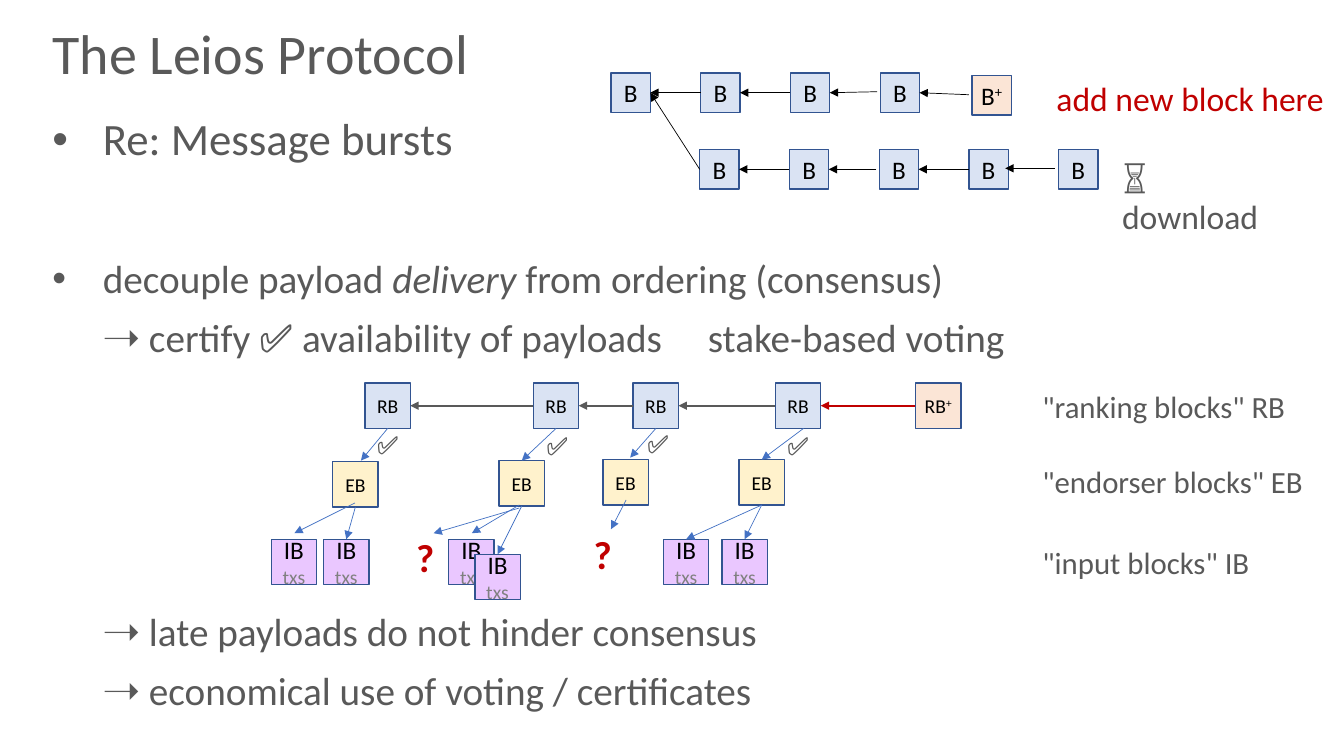
"""Build the Leios Protocol slide with its two block diagrams."""
from dataclasses import dataclass
from math import dist
from typing import Any, NamedTuple

from lxml import etree
from pptx import Presentation
from pptx import slide as sl
from pptx import util as u
from pptx.dml import color as dml
from pptx.enum import shapes, text
from pptx.oxml import ns

GREY, BLACK, RED, BLUE = "595959", "000000", "C00000", "4472C4"
PALE, PEACH, CREAM, LILAC = "DAE3F3", "FBE5D6", "FFF2CC", "EAC7FF"
SNAP = 0.025


class Run(NamedTuple):
    words: str
    size: float
    tint: str = GREY
    bold: bool = False
    slant: bool = False
    raised: bool = False


@dataclass
class Box:
    left: float
    top: float
    side: float
    fill: str
    rows: list[list[Run]]
    inset: tuple[float, float, float, float] = (0.1, 0.05, 0.1, 0.05)

    def ports(self) -> list[tuple[float, float]]:
        half = self.side / 2
        x, y = self.left + half, self.top + half
        return [(x, self.top), (self.left, y),
                (x, self.top + self.side), (self.left + self.side, y)]


class Arrow(NamedTuple):
    start: tuple[float, float]
    end: tuple[float, float]
    tint: str
    width: float


class Label(NamedTuple):
    left: float
    top: float
    width: float
    height: float
    run: Run
    wrap: bool = True


class Item(NamedTuple):
    runs: list[Run]
    after: float
    level: int = 0
    tab: float = 0


def hue(code: str) -> dml.RGBColor:
    return dml.RGBColor.from_string(code)


def apply(thing: Any, form: dict[str, Any]) -> None:
    for name, value in form.items():
        setattr(thing, name, value)


def add_node(host: Any, tag: str, **attrs: str) -> Any:
    return etree.SubElement(host, ns.qn(tag), attrs)


def add_runs(para: Any, runs: list[Run]) -> None:
    for item in runs:
        run = para.add_run()
        run.text = item.words
        apply(run.font, {"name": "Calibri", "size": u.Pt(item.size),
                         "bold": item.bold, "italic": item.slant})
        run.font.color.rgb = hue(item.tint)
        if item.raised:
            run._r.get_or_add_rPr().set("baseline", "30000")


def place(shape: Any, left: float, top: float, width: float, height: float) -> None:
    apply(shape, {"left": u.Inches(left), "top": u.Inches(top),
                  "width": u.Inches(width), "height": u.Inches(height)})


def draw_box(page: sl.Slide, box: Box) -> Any:
    shape = page.shapes.add_shape(
        shapes.MSO_SHAPE.RECTANGLE, *map(u.Inches, (box.left, box.top, box.side, box.side)))
    shape.shadow.inherit = False
    shape.fill.solid()
    shape.fill.fore_color.rgb = hue(box.fill)
    shape.line.color.rgb = hue("325491")
    shape.line.width = u.Pt(1)
    frame = shape.text_frame
    sides = ("margin_left", "margin_top", "margin_right", "margin_bottom")
    apply(frame, dict(zip(sides, map(u.Inches, box.inset))))
    frame.vertical_anchor = text.MSO_ANCHOR.MIDDLE
    for num, row in enumerate(box.rows):
        para = frame.add_paragraph() if num else frame.paragraphs[0]
        para.alignment = text.PP_ALIGN.CENTER
        add_runs(para, row)
    return shape


def draw_arrow(page: sl.Slide, arrow: Arrow, drawn: list[tuple[Box, Any]]) -> None:
    line = page.shapes.add_connector(
        shapes.MSO_CONNECTOR.STRAIGHT, *map(u.Inches, (*arrow.start, *arrow.end)))
    line.line.color.rgb = hue(arrow.tint)
    line.line.width = u.Pt(arrow.width)
    props = line._element.spPr
    add_node(props.find(ns.qn("a:ln")), "a:tailEnd", type="triangle")
    add_node(props, "a:effectLst")
    for point, join in ((arrow.start, line.begin_connect), (arrow.end, line.end_connect)):
        for box, shape in drawn:
            for site, port in enumerate(box.ports()):
                if dist(point, port) < SNAP:
                    join(shape, site)


def draw_label(page: sl.Slide, label: Label) -> None:
    frame = page.shapes.add_textbox(*map(u.Inches, label[:4])).text_frame
    frame.word_wrap = label.wrap
    add_runs(frame.paragraphs[0], [label.run])


def fill_body(frame: Any, items: list[Item]) -> None:
    apply(frame, {"auto_size": text.MSO_AUTO_SIZE.NONE, "word_wrap": True})
    for num, item in enumerate(items):
        para = frame.add_paragraph() if num else frame.paragraphs[0]
        apply(para, {"level": item.level, "line_spacing": 0.9,
                     "space_before": u.Pt(0), "space_after": u.Pt(item.after)})
        props = para._p.get_or_add_pPr()
        props.set("marL", str(u.Inches(0.5)))
        props.set("indent", str(0 if item.level else u.Inches(-0.5)))
        if item.level:
            add_node(props, "a:buNone")
        else:
            add_node(props, "a:buFont", typeface="Arial")
            add_node(props, "a:buChar", char="•")
        if item.tab:
            stops = add_node(props, "a:tabLst")
            add_node(stops, "a:tab", pos=str(u.Inches(item.tab)), algn="l")
        add_runs(para, item.runs)


ITEMS = [
    Item([Run("Re: Message bursts", 32)], 67),
    Item([Run("decouple payload ", 28), Run("delivery", 28, slant=True),
          Run(" from ordering (consensus)", 28)], 12),
    Item([Run("➝ certify ✅ availability of payloads\tstake-based voting", 28)], 180, 1, 7.5),
    Item([Run("➝ late payloads do not hinder consensus", 28)], 12, 1),
    Item([Run("➝ economical use of voting / certificates", 28)], 18, 1),
]

CHAIN = [(6.06 + 0.89 * i, 0.725) for i in range(4)] + [(6.94 + 0.89 * i, 1.485) for i in range(5)]
RANKS = [3.62, 5.29, 6.28, 7.69]
ENDORSED = [(3.3, 4.58), (4.95, 4.57), (5.98, 4.56), (7.33, 4.56)]
INPUTS = [(4.45, 5.35), (7.16, 5.35), (6.58, 5.35), (3.21, 5.35), (2.69, 5.35), (4.71, 5.5)]
SLIM = (0, 0.05, 0, 0.05)


def plus(name: str, size: float) -> list[list[Run]]:
    return [[Run(name, size, BLACK), Run("+", size, BLACK, raised=True)]]


BOXES = [
    *(Box(x, y, 0.39, PALE, [[Run("B", 18, BLACK)]]) for x, y in CHAIN),
    Box(9.64, 0.75, 0.39, PEACH, plus("B", 18), SLIM),
    *(Box(x, 3.8, 0.45, PALE, [[Run("RB", 14, BLACK)]]) for x in RANKS),
    Box(9.08, 3.8, 0.45, PEACH, plus("RB", 14), SLIM),
    *(Box(x, y, 0.45, CREAM, [[Run("EB", 14, BLACK)]]) for x, y in ENDORSED),
    *(Box(x, y, 0.45, LILAC, [[Run("IB", 18, BLACK)], [Run("txs", 14, "808080")]],
          (0, 0.04, 0, 0.05)) for x, y in INPUTS),
]

FLAT = [(6.95, 6.46, 0.92), (7.84, 7.35, 0.92), (8.7, 8.21, 0.91), (9.61, 9.13, 0.94),
        (7.83, 7.34, 1.68), (8.69, 8.21, 1.68), (9.6, 9.11, 1.68), (10.46, 9.97, 1.67)]
SLOPES = [
    (3.84, 4.25, 3.58, 4.57), (5.52, 4.25, 5.18, 4.57), (6.51, 4.25, 6.25, 4.54),
    (7.97, 4.25, 7.55, 4.56), (3.52, 4.99, 2.92, 5.29), (3.52, 5.04, 3.44, 5.35),
    (5.15, 5.01, 4.68, 5.29), (5.15, 5.04, 4.3, 5.29), (5.18, 5.03, 4.94, 5.5),
    (6.21, 4.96, 6.06, 5.25), (7.55, 5.01, 6.8, 5.35), (7.55, 5.01, 7.39, 5.35),
]
ARROWS = [
    *(Arrow((a, y), (b, y), BLACK, 0.5) for a, b, y in FLAT),
    Arrow((6.94, 1.68), (6.45, 0.92), BLACK, 0.5),
    *(Arrow((b, 4.03), (a + 0.45, 4.03), GREY, 1.25) for a, b in zip(RANKS, RANKS[1:])),
    Arrow((9.1, 4.03), (8.15, 4.03), RED, 1.25),
    *(Arrow((a, b), (c, d), BLUE, 0.5) for a, b, c, d in SLOPES),
]

LABELS = [
    Label(11.03, 1.49, 1.75, 0.91, Run("⏳ download", 24)),
    Label(10.38, 0.72, 2.91, 0.5, Run("add new block here", 24, RED)),
    *(Label(10.24, y, 2.99, 0.47, Run(words, 22)) for y, words in (
        (3.8, '"ranking blocks" RB'), (4.54, '"endorser blocks" EB'), (5.34, '"input blocks" IB'))),
    *(Label(x, y, 0.35, 0.5, Run("?", 28, RED, bold=True)) for x, y in ((4.03, 5.24), (5.79, 5.21))),
    *(Label(x, y, 0.4, 0.35, Run("✅", 18), False)
      for x, y in ((3.64, 4.21), (5.32, 4.22), (6.32, 4.2), (7.71, 4.22))),
]


def main() -> None:
    deck = Presentation()
    apply(deck, {"slide_width": u.Inches(13.33), "slide_height": u.Inches(7.5)})
    page = deck.slides.add_slide(deck.slide_layouts[1])
    title, body = page.placeholders
    place(title, 0.42, 0, 12.92, 1.11)
    place(body, 0.42, 1.11, 12.92, 6.08)
    title.text_frame.vertical_anchor = text.MSO_ANCHOR.MIDDLE
    head = title.text_frame.paragraphs[0]
    apply(head, {"alignment": text.PP_ALIGN.LEFT, "line_spacing": 0.9})
    add_runs(head, [Run("The Leios Protocol", 40)])
    fill_body(body.text_frame, ITEMS)
    drawn = [(box, draw_box(page, box)) for box in BOXES]
    for arrow in ARROWS:
        draw_arrow(page, arrow, drawn)
    for label in LABELS:
        draw_label(page, label)
    deck.save("out.pptx")


if __name__ == "__main__":
    main()
